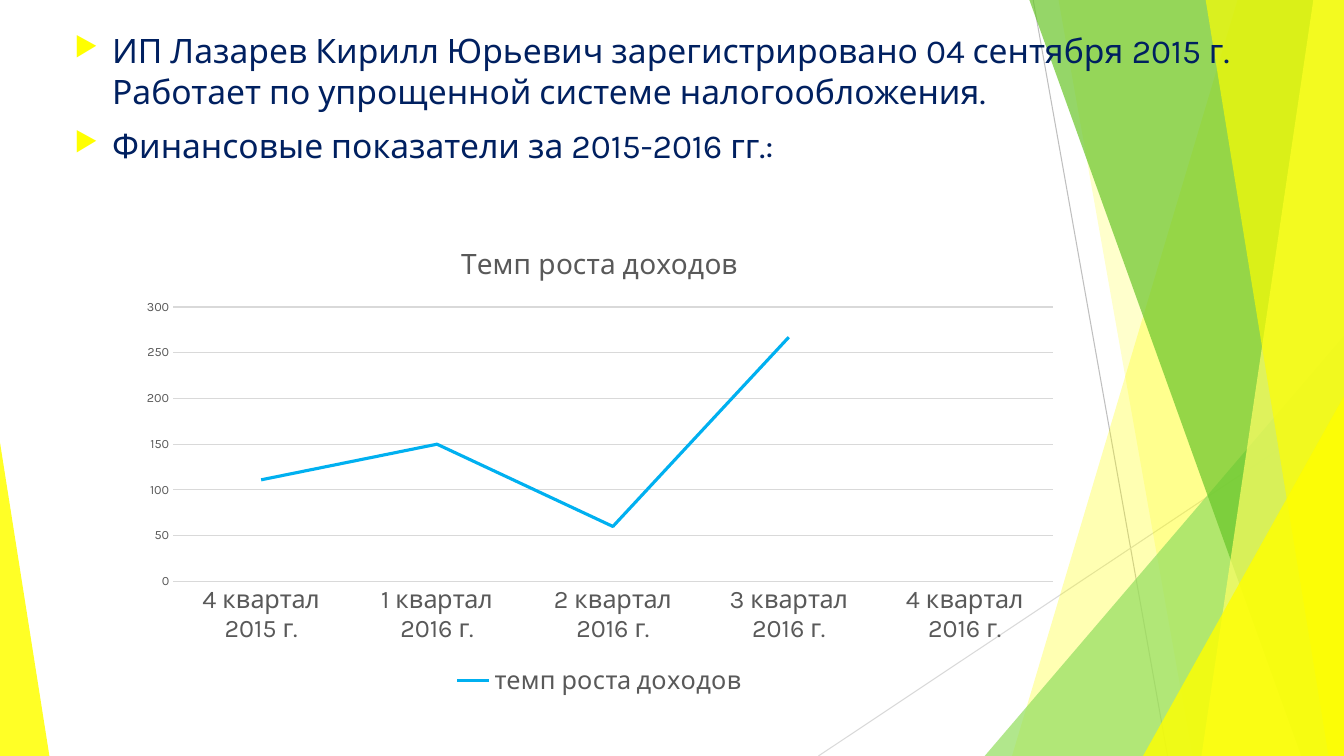
"""Build the slide on income growth with its faceted side decoration."""
from dataclasses import dataclass
from typing import Any

import lxml.etree
import pptx
import pptx.chart.data
import pptx.dml.color
import pptx.enum.chart
import pptx.enum.shapes
import pptx.enum.text
import pptx.oxml.ns
import pptx.util

Pt = pptx.util.Pt
RGBColor = pptx.dml.color.RGBColor
qn = pptx.oxml.ns.qn

YELLOW = RGBColor(0xFF, 0xFF, 0x00)
PALE_YELLOW = RGBColor(0xFF, 0xFF, 0x66)
LIGHT_GREEN = RGBColor(0x93, 0xDE, 0x61)
GREEN = RGBColor(0x68, 0xC6, 0x29)
NAVY = RGBColor(0x00, 0x20, 0x60)
SKY = RGBColor(0x00, 0xB0, 0xF0)
TEXT_GREY = RGBColor(0x59, 0x59, 0x59)
MID_GREY = RGBColor(0xBF, 0xBF, 0xBF)
LIGHT_GREY = RGBColor(0xD9, 0xD9, 0xD9)

FONT = "Karla"
WIDTH, HEIGHT = 960, 540
FACET_TOP = -0.6


@dataclass(frozen=True)
class Ray:
    """A thin line behind the facets."""
    start: tuple[float, float]
    end: tuple[float, float]
    color: RGBColor


@dataclass(frozen=True)
class Facet:
    """A full-height panel with a slanted left edge, reaching the right edge."""
    top_x: float
    bottom_x: float
    color: RGBColor
    opacity: int


@dataclass(frozen=True)
class Wedge:
    """A right triangle standing on the bottom edge."""
    left: float
    top: float
    width: float
    apex: float
    color: RGBColor
    opacity: int


RAYS = [
    Ray((738, 0), (834, HEIGHT), MID_GREY),
    Ray((WIDTH, 290), (584.6, HEIGHT), LIGHT_GREY),
]
PANELS: list[Facet | Wedge] = [
    Facet(884.2, 722.9, YELLOW, 30),
    Facet(756, 851.8, YELLOW, 20),
    Wedge(703.4, 239.8, 256.6, 1, LIGHT_GREEN, 72),
    Facet(735.1, 929.5, GREEN, 70),
    Facet(938.2, 858.2, PALE_YELLOW, 70),
    Facet(861.1, 949, YELLOW, 65),
    Wedge(816.5, 283, 143.5, 1, YELLOW, 80),
    Wedge(0, 316.1, 35.3, 0, YELLOW, 85),
]
STATEMENTS = [
    "ИП Лазарев Кирилл Юрьевич зарегистрировано 04 сентября 2015 г. "
    "Работает по упрощенной системе налогообложения.",
    "Финансовые показатели за 2015-2016 гг.:",
]
QUARTERS = ["4 квартал 2015 г.", *(f"{number} квартал 2016 г." for number in range(1, 5))]
GROWTH = [111, 150, 60, 267, None]


def draw_ray(shapes: Any, ray: Ray) -> None:
    """Draw one thin line."""
    line = shapes.add_connector(
        pptx.enum.shapes.MSO_CONNECTOR.STRAIGHT, *map(Pt, ray.start + ray.end))
    line.line.color.rgb = ray.color
    line.line.width = Pt(0.75)
    lxml.etree.SubElement(line.element.spPr, qn("a:effectLst"))


def draw_panel(shapes: Any, panel: Facet | Wedge) -> None:
    """Draw one translucent facet or wedge."""
    if isinstance(panel, Facet):
        builder = shapes.build_freeform(Pt(panel.top_x), Pt(FACET_TOP))
        builder.add_line_segments([
            (Pt(WIDTH), Pt(FACET_TOP)),
            (Pt(WIDTH), Pt(HEIGHT)),
            (Pt(panel.bottom_x), Pt(HEIGHT)),
        ])
        shape = builder.convert_to_shape()
    else:
        shape = shapes.add_shape(
            pptx.enum.shapes.MSO_SHAPE.ISOSCELES_TRIANGLE, Pt(panel.left), Pt(panel.top),
            Pt(panel.width), Pt(HEIGHT - panel.top))
        shape.adjustments[0] = panel.apex
    shape.shadow.inherit = False
    shape.fill.solid()
    shape.fill.fore_color.rgb = panel.color
    shape.line.fill.background()
    tint = shape.element.spPr.find(f"{qn('a:solidFill')}/{qn('a:srgbClr')}")
    lxml.etree.SubElement(tint, qn("a:alpha"), val=str(panel.opacity * 1000))


def style_font(font: Any, size: float, color: RGBColor) -> None:
    """Apply the slide typeface with a size and colour."""
    font.name = FONT
    font.size = Pt(size)
    font.bold = False
    font.color.rgb = color


def add_bullet(paragraph: Any) -> None:
    """Give a paragraph a hanging yellow arrow bullet."""
    properties = paragraph._p.get_or_add_pPr()
    properties.set("marL", str(Pt(27)))
    properties.set("indent", str(-Pt(27)))
    bullet_color = lxml.etree.SubElement(properties, qn("a:buClr"))
    lxml.etree.SubElement(bullet_color, qn("a:srgbClr"), val=str(YELLOW))
    lxml.etree.SubElement(properties, qn("a:buSzPct"), val="80000")
    lxml.etree.SubElement(properties, qn("a:buChar"), char="▶")


def add_statements(shapes: Any) -> None:
    """Write the bulleted statements."""
    frame = shapes.add_textbox(Pt(46), Pt(18), Pt(859), Pt(492.5)).text_frame
    frame.word_wrap = True
    frame.vertical_anchor = pptx.enum.text.MSO_ANCHOR.TOP
    for index, statement in enumerate(STATEMENTS):
        paragraph = frame.add_paragraph() if index else frame.paragraphs[0]
        paragraph.text = statement
        paragraph.space_before = Pt(10)
        add_bullet(paragraph)
        style_font(paragraph.font, 24, NAVY)


def add_growth_chart(shapes: Any) -> None:
    """Plot income growth by quarter."""
    growth_data = pptx.chart.data.CategoryChartData()
    growth_data.categories = QUARTERS
    growth_data.add_series("темп роста доходов", GROWTH)
    chart = shapes.add_chart(
        pptx.enum.chart.XL_CHART_TYPE.LINE, Pt(91.4), Pt(160.6), Pt(674), Pt(339.8),
        growth_data).chart
    style_font(chart.font, 10, TEXT_GREY)

    chart.has_title = True
    heading = chart.chart_title.text_frame
    heading.text = "Темп роста доходов"
    style_font(heading.paragraphs[0].font, 20, TEXT_GREY)

    chart.has_legend = True
    chart.legend.position = pptx.enum.chart.XL_LEGEND_POSITION.BOTTOM
    chart.legend.include_in_layout = False
    style_font(chart.legend.font, 18, TEXT_GREY)

    for axis, size in ((chart.category_axis, 18), (chart.value_axis, 9)):
        axis.major_tick_mark = pptx.enum.chart.XL_TICK_MARK.NONE
        axis.minor_tick_mark = pptx.enum.chart.XL_TICK_MARK.NONE
        style_font(axis.tick_labels.font, size, TEXT_GREY)
    chart.value_axis.format.line.fill.background()
    chart.value_axis.has_major_gridlines = True
    for rule in (chart.category_axis.format.line,
                 chart.value_axis.major_gridlines.format.line):
        rule.color.rgb = LIGHT_GREY
        rule.width = Pt(0.75)

    plot = chart.plots[0]
    plot.vary_by_categories = False
    growth = plot.series[0]
    growth.smooth = False
    growth.marker.style = pptx.enum.chart.XL_MARKER_STYLE.NONE
    growth.format.line.color.rgb = SKY
    growth.format.line.width = Pt(2.25)


def main() -> None:
    """Assemble and save the slide."""
    deck = pptx.Presentation()
    deck.slide_width, deck.slide_height = Pt(WIDTH), Pt(HEIGHT)
    shapes = deck.slides.add_slide(deck.slide_layouts[6]).shapes
    for ray in RAYS:
        draw_ray(shapes, ray)
    for panel in PANELS:
        draw_panel(shapes, panel)
    add_statements(shapes)
    add_growth_chart(shapes)
    deck.save("out.pptx")


if __name__ == "__main__":
    main()
